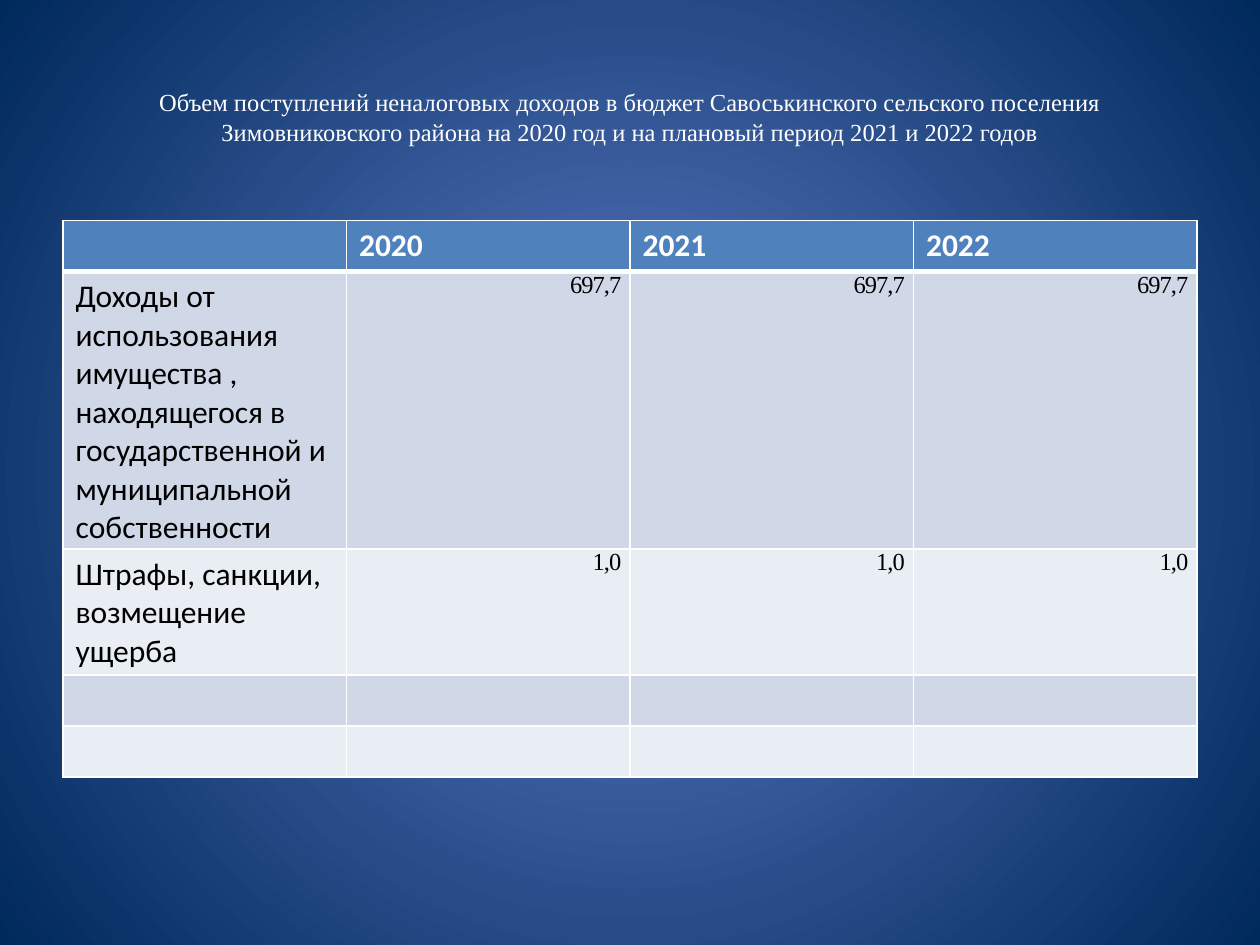
from pptx import Presentation
from pptx.dml.color import RGBColor
from pptx.enum.text import MSO_ANCHOR, PP_ALIGN
from pptx.oxml.ns import qn
from pptx.util import Pt
from lxml.etree import SubElement

WHITE = RGBColor(0xFF, 0xFF, 0xFF)
BLACK = RGBColor(0x00, 0x00, 0x00)
HEADER = RGBColor(0x4F, 0x81, 0xBD)
BANDS = RGBColor(0xD0, 0xD8, 0xE8), RGBColor(0xE9, 0xED, 0xF4)
GLOW = RGBColor(0x5E, 0x7C, 0xC5)
NAVY = RGBColor(0x00, 0x29, 0x5C)

TITLE = (
    "Объем поступлений неналоговых доходов в бюджет Савоськинского сельского поселения "
    "Зимовниковского района на 2020 год и на плановый период 2021 и 2022 годов"
)
ROWS = [
    ["", "2020", "2021", "2022"],
    ["Доходы от использования имущества , находящегося в государственной "
     "и муниципальной собственности", "697,7", "697,7", "697,7"],
    ["Штрафы, санкции, возмещение ущерба", "1,0", "1,0", "1,0"],
    [""] * 4,
    [""] * 4,
]


def set_background(s):
    fill = s.background.fill
    fill.gradient()
    for stop, color in zip(fill.gradient_stops, (GLOW, NAVY)):
        stop.color.rgb = color
    grad = s.element.find(".//" + qn("a:gradFill"))
    grad.remove(grad.find(qn("a:lin")))
    path = SubElement(grad, qn("a:path"), {"path": "circle"})
    SubElement(path, qn("a:fillToRect"), {side: "50000" for side in "ltrb"})


def set_font(p, name, size, color, bold=False):
    p.font.name = name
    p.font.size = Pt(size)
    p.font.color.rgb = color
    p.font.bold = bold


def add_title(s, left, top, width, height):
    tf = s.shapes.add_textbox(Pt(left), Pt(top), Pt(width), Pt(height)).text_frame
    tf.word_wrap = True
    tf.vertical_anchor = MSO_ANCHOR.MIDDLE
    p = tf.paragraphs[0]
    p.text = TITLE
    p.alignment = PP_ALIGN.CENTER
    set_font(p, "Times New Roman", 14, WHITE)


def set_borders(cell, top, bottom):
    tcPr = cell._tc.get_or_add_tcPr()
    for side, width in (("L", 1), ("R", 1), ("T", top), ("B", bottom)):
        ln = SubElement(tcPr, qn("a:ln" + side), {"w": str(Pt(width))})
        fill = SubElement(ln, qn("a:solidFill"))
        SubElement(fill, qn("a:srgbClr"), {"val": str(WHITE)})


def format_amount(cell):
    cell.margin_left = cell.margin_right = Pt(5)
    cell.margin_top = cell.margin_bottom = Pt(0)
    p = cell.text_frame.paragraphs[0]
    p.alignment = PP_ALIGN.RIGHT
    set_font(p, "Times New Roman", 14, BLACK)
    for r in p.runs:
        r.font._element.set("spc", "-60")


def add_income_table(s, left, top, width, row_height):
    table = s.shapes.add_table(
        len(ROWS), len(ROWS[0]), Pt(left), Pt(top), Pt(width), Pt(row_height * len(ROWS))
    ).table
    for i, row in enumerate(ROWS):
        for j, text in enumerate(row):
            cell = table.cell(i, j)
            cell.text = text
            set_borders(cell, 3 if i == 1 else 1, 3 if i == 0 else 1)
            cell.fill.solid()
            cell.fill.fore_color.rgb = BANDS[(i - 1) % 2] if i else HEADER
            if i and j and text:
                format_amount(cell)
            else:
                set_font(cell.text_frame.paragraphs[0], "Calibri", 18,
                         BLACK if i else WHITE, i == 0)


def main():
    prs = Presentation()
    prs.slide_width, prs.slide_height = Pt(720), Pt(540)
    s = prs.slides.add_slide(prs.slide_layouts[6])
    set_background(s)
    add_title(s, 36, 21.6, 648, 90)
    add_income_table(s, 36, 126, 648, 29.2)
    prs.save("out.pptx")


if __name__ == "__main__":
    main()
